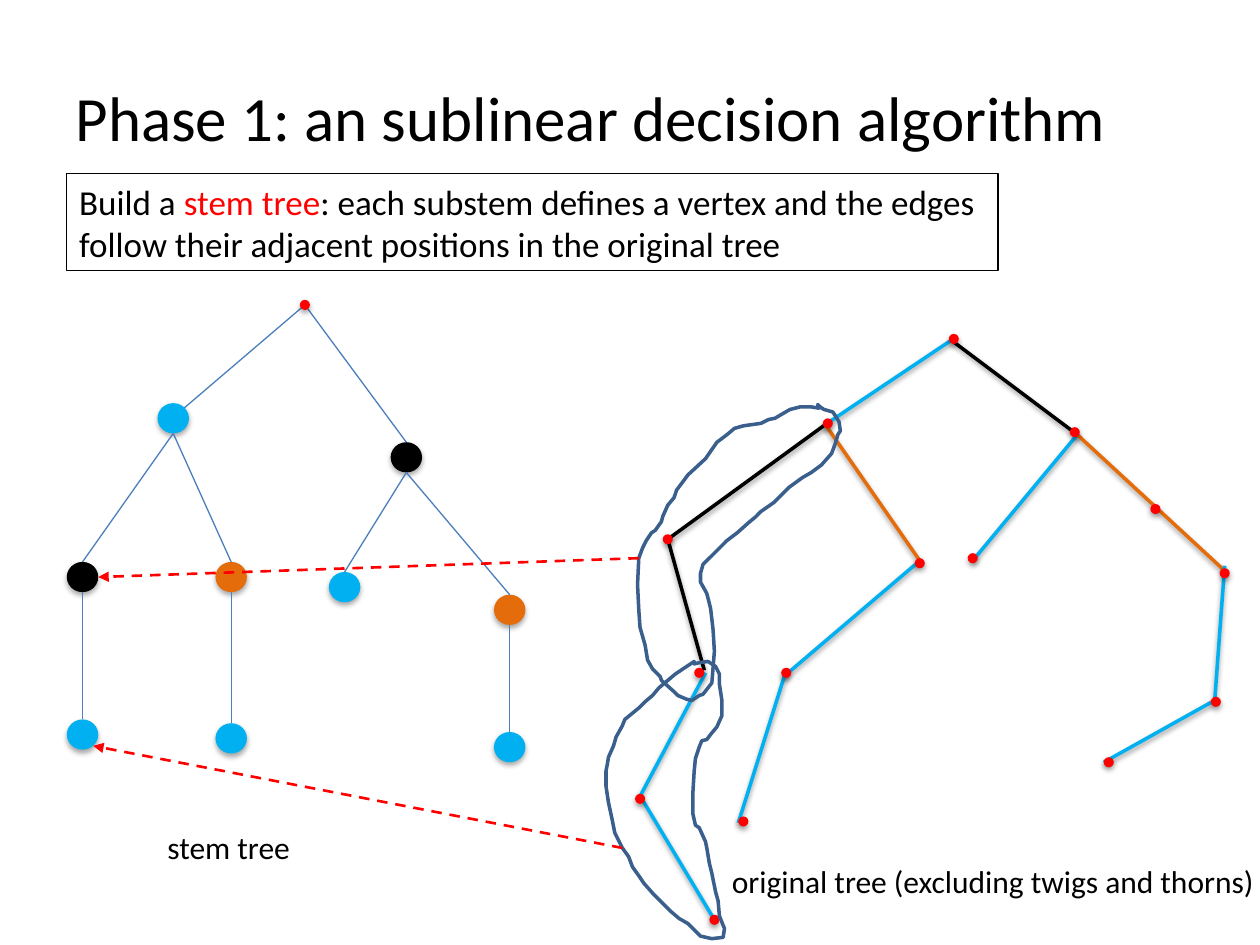
"""Build the slide that relates a stem tree to the original tree."""
from dataclasses import dataclass
from typing import NamedTuple

from lxml import etree
from pptx import Presentation
from pptx.dml.color import RGBColor
from pptx.enum.dml import MSO_LINE
from pptx.enum.shapes import MSO_CONNECTOR, MSO_SHAPE
from pptx.enum.text import MSO_ANCHOR, MSO_AUTO_SIZE, PP_ALIGN
from pptx.oxml.ns import qn
from pptx.util import Inches, Pt

STRAIGHT = MSO_CONNECTOR.STRAIGHT
NODE = MSO_SHAPE.FLOWCHART_CONNECTOR
DASH = MSO_LINE.DASH
MIDDLE = MSO_ANCHOR.MIDDLE
LEFT = PP_ALIGN.LEFT
GROW = MSO_AUTO_SIZE.SHAPE_TO_FIT_TEXT


@dataclass(frozen=True)
class Theme:
    """Colours, font and sizes in points."""
    font: str = "Calibri"
    title: int = 36
    body: int = 20
    label: int = 18
    thin: float = 0.75
    dashed: float = 1.5
    thick: float = 2
    black: str = "000000"
    red: str = "FF0000"
    blue: str = "00B0F0"
    orange: str = "E46C0A"
    edge: str = "4B7EBC"
    outline: str = "3A5F8C"


class Point(NamedTuple):
    """A place on the slide in inches."""
    x: float
    y: float


class Stem(NamedTuple):
    """A coloured line of the original tree."""
    start: Point
    end: Point
    color: str


class Vertex(NamedTuple):
    """A substem in the stem tree, placed by its top left corner."""
    x: float
    y: float
    color: str


class Label(NamedTuple):
    """A caption without wrapping."""
    text: str
    x: float
    y: float
    width: float


THEME = Theme()
DOT = 0.08
VERTEX_WIDTH, VERTEX_HEIGHT = 0.25, 0.24
BLACK, BLUE, ORANGE = THEME.black, THEME.blue, THEME.orange

STEMS = [
    Stem(Point(7.55, 2.7), Point(6.55, 3.37), BLUE),
    Stem(Point(7.55, 2.7), Point(8.55, 3.45), BLACK),
    Stem(Point(6.55, 3.37), Point(5.3, 4.28), BLACK),
    Stem(Point(6.55, 3.37), Point(7.3, 4.45), ORANGE),
    Stem(Point(8.55, 3.45), Point(7.72, 4.45), BLUE),
    Stem(Point(8.55, 3.45), Point(9.72, 4.53), ORANGE),
    Stem(Point(7.3, 4.45), Point(6.22, 5.37), BLUE),
    Stem(Point(9.72, 4.49), Point(9.64, 5.57), BLUE),
    Stem(Point(9.62, 5.57), Point(8.76, 6.05), BLUE),
    Stem(Point(5.3, 4.28), Point(5.59, 5.32), BLACK),
    Stem(Point(5.6, 5.34), Point(5.08, 6.32), BLUE),
    Stem(Point(5.1, 6.35), Point(5.67, 7.3), BLUE),
    Stem(Point(6.24, 5.32), Point(5.86, 6.53), BLUE),
]
DOTS = [Point(*place) for place in (
    (5.51, 5.3), (6.53, 3.32), (5.26, 4.24), (5.04, 6.3), (5.63, 7.26),
    (7.26, 4.43), (6.2, 5.3), (5.86, 6.48), (7.53, 2.65), (8.49, 3.39),
    (7.68, 4.39), (9.68, 4.51), (9.61, 5.53), (8.76, 6.01), (9.13, 4))]
ROOT = Point(2.38, 2.38)
VERTICES = {
    "left": Vertex(1.25, 3.2, BLUE),
    "right": Vertex(3.1, 3.51, BLACK),
    "left.1": Vertex(0.53, 4.46, BLACK),
    "left.2": Vertex(1.71, 4.46, ORANGE),
    "right.1": Vertex(2.61, 4.54, BLUE),
    "right.2": Vertex(3.92, 4.72, ORANGE),
    "left.1.1": Vertex(0.53, 5.71, BLUE),
    "left.2.1": Vertex(1.71, 5.74, BLUE),
    "right.2.1": Vertex(3.92, 5.81, BLUE),
}
LOWER_SUBSTEM = [Point(*place) for place in (
    (5.51, 5.25), (5.42, 5.31), (5.36, 5.35), (5.23, 5.46), (5.18, 5.52), (5.12, 5.57),
    (5.07, 5.62), (4.96, 5.71), (4.94, 5.76), (4.89, 5.85), (4.87, 5.92), (4.83, 6.01),
    (4.82, 6.07), (4.81, 6.12), (4.81, 6.24), (4.83, 6.37), (4.86, 6.51), (4.88, 6.61),
    (4.94, 6.73), (4.99, 6.8), (5.02, 6.88), (5.07, 6.95), (5.11, 7.01), (5.19, 7.1),
    (5.24, 7.15), (5.32, 7.23), (5.39, 7.29), (5.46, 7.33), (5.5, 7.37), (5.56, 7.43),
    (5.65, 7.45), (5.74, 7.44), (5.75, 7.37), (5.71, 7.27), (5.7, 7.15), (5.68, 7.08),
    (5.65, 6.93), (5.63, 6.85), (5.61, 6.73), (5.6, 6.68), (5.55, 6.57), (5.52, 6.55),
    (5.5, 6.46), (5.5, 6.29), (5.51, 6.12), (5.52, 6.02), (5.55, 5.93), (5.57, 5.88),
    (5.61, 5.87), (5.64, 5.83), (5.69, 5.77), (5.73, 5.68), (5.73, 5.56), (5.71, 5.43),
    (5.71, 5.35), (5.68, 5.29), (5.62, 5.25), (5.55, 5.26), (5.51, 5.27))]
UPPER_SUBSTEM = [Point(*place) for place in (
    (6.5, 3.24), (6.44, 3.23), (6.35, 3.23), (6.27, 3.25), (6.15, 3.32), (6.1, 3.33),
    (6.04, 3.36), (5.9, 3.38), (5.83, 3.4), (5.77, 3.45), (5.69, 3.51), (5.6, 3.64),
    (5.46, 3.77), (5.43, 3.81), (5.37, 3.89), (5.35, 3.95), (5.3, 4.01), (5.26, 4.1),
    (5.25, 4.14), (5.2, 4.21), (5.17, 4.23), (5.13, 4.29), (5.1, 4.35), (5.07, 4.43),
    (5.06, 4.64), (5.07, 4.84), (5.08, 4.98), (5.1, 5.05), (5.12, 5.12), (5.14, 5.24),
    (5.18, 5.31), (5.24, 5.37), (5.25, 5.4), (5.35, 5.49), (5.38, 5.52), (5.45, 5.55),
    (5.49, 5.56), (5.55, 5.52), (5.58, 5.51), (5.65, 5.42), (5.67, 5.17), (5.66, 5),
    (5.64, 4.83), (5.61, 4.71), (5.56, 4.62), (5.56, 4.55), (5.58, 4.48), (5.62, 4.44),
    (5.7, 4.36), (5.77, 4.29), (5.85, 4.23), (5.94, 4.15), (6, 4.1), (6.04, 4.06),
    (6.14, 3.99), (6.2, 3.93), (6.26, 3.87), (6.37, 3.79), (6.44, 3.75), (6.52, 3.69),
    (6.6, 3.6), (6.63, 3.52), (6.65, 3.45), (6.67, 3.42), (6.66, 3.35), (6.63, 3.3),
    (6.61, 3.27), (6.54, 3.25), (6.51, 3.23), (6.49, 3.21))]
LABELS = [Label("original tree (excluding twigs and thorns)", 5.71, 6.79, 4.4),
          Label("stem tree", 1.23, 6.52, 1.19)]


def add_shadow(part, alpha: int, distance: float) -> None:
    """Give a shape or connector a soft shadow straight below it."""
    effects = part.element.spPr.find(qn("a:effectLst"))
    shadow = etree.SubElement(effects, qn("a:outerShdw"), blurRad=str(Pt(3.1)),
                              dist=str(Pt(distance)), dir="5400000", rotWithShape="0")
    color = etree.SubElement(shadow, qn("a:srgbClr"), val=THEME.black)
    etree.SubElement(color, qn("a:alpha"), val=str(alpha * 1000))


def add_line(slide, start: Point, end: Point, color: str, width: float):
    """Draw a straight line without a shadow."""
    line = slide.shapes.add_connector(STRAIGHT, *map(Inches, (*start, *end)))
    line.line.color.rgb = RGBColor.from_string(color)
    line.line.width = Pt(width)
    etree.SubElement(line.element.spPr, qn("a:effectLst"))
    return line


def add_arrow(slide, start: Point, end: Point) -> None:
    """Draw a dashed arrow from a substem to its vertex."""
    arrow = add_line(slide, start, end, THEME.red, THEME.dashed)
    arrow.line.dash_style = DASH
    etree.SubElement(arrow.element.spPr.find(qn("a:ln")), qn("a:tailEnd"), type="triangle")


def add_node(slide, corner: Point, width: float, height: float, color: str) -> None:
    """Draw a round node with a shadow."""
    node = slide.shapes.add_shape(NODE, *map(Inches, (*corner, width, height)))
    node.fill.solid()
    node.fill.fore_color.rgb = RGBColor.from_string(color)
    node.line.fill.background()
    node.shadow.inherit = False
    add_shadow(node, 35, 1.8)


def add_outline(slide, points: list[Point]) -> None:
    """Draw a closed loop around a substem."""
    corners = [(Inches(x), Inches(y)) for x, y in points]
    builder = slide.shapes.build_freeform(*corners[0])
    builder.add_line_segments(corners[1:])
    loop = builder.convert_to_shape()
    loop.fill.background()
    loop.line.color.rgb = RGBColor.from_string(THEME.outline)
    loop.line.width = Pt(THEME.thick)
    loop.shadow.inherit = False


def style_text(paragraph, size: int) -> None:
    """Set the shared font on a paragraph."""
    paragraph.font.name = THEME.font
    paragraph.font.size = Pt(size)
    paragraph.font.color.rgb = RGBColor.from_string(THEME.black)


def add_title(slide) -> None:
    """Fill the title placeholder."""
    title = slide.shapes.title
    title.left, title.top, title.width, title.height = map(Inches, (0.5, 0.3, 9, 1.25))
    title.text_frame.text = "Phase 1: an sublinear decision algorithm"
    title.text_frame.vertical_anchor = MIDDLE
    title.text_frame.paragraphs[0].alignment = LEFT
    style_text(title.text_frame.paragraphs[0], THEME.title)


def add_definition(slide) -> None:
    """Add the framed definition of a stem tree."""
    definition = slide.shapes.add_textbox(*map(Inches, (0.53, 1.38, 7.39, 0.77)))
    definition.line.color.rgb = RGBColor.from_string(THEME.black)
    definition.line.width = Pt(THEME.thin)
    definition.text_frame.word_wrap = True
    definition.text_frame.auto_size = GROW
    paragraph = definition.text_frame.paragraphs[0]
    style_text(paragraph, THEME.body)
    paragraph.add_run().text = "Build a "
    term = paragraph.add_run()
    term.text = "stem tree"
    term.font.color.rgb = RGBColor.from_string(THEME.red)
    paragraph.add_run().text = (": each substem defines a vertex and the edges "
                                "follow their adjacent positions in the original tree")


def add_label(slide, label: Label) -> None:
    """Add a caption below a tree."""
    caption = slide.shapes.add_textbox(*map(Inches, (label.x, label.y, label.width, 0.4)))
    caption.text_frame.word_wrap = False
    caption.text_frame.auto_size = GROW
    caption.text_frame.text = label.text
    style_text(caption.text_frame.paragraphs[0], THEME.label)


def add_original_tree(slide) -> None:
    """Draw the stems and their joints."""
    for stem in STEMS:
        add_shadow(add_line(slide, *stem, THEME.thick), 38, 1.6)
    for dot in DOTS:
        add_node(slide, dot, DOT, DOT, THEME.red)


def add_stem_tree(slide) -> None:
    """Draw the vertices and join each one to its parent."""
    for vertex in VERTICES.values():
        add_node(slide, Point(vertex.x, vertex.y), VERTEX_WIDTH, VERTEX_HEIGHT, vertex.color)
    for name, vertex in VERTICES.items():
        top = Point(vertex.x + VERTEX_WIDTH / 2, vertex.y)
        parent = VERTICES.get(name.rpartition(".")[0])
        start = Point(ROOT.x + DOT / 2, ROOT.y + DOT / 2)
        if parent:
            start = Point(parent.x + VERTEX_WIDTH / 2, parent.y + VERTEX_HEIGHT)
        elif name == "left":
            top = Point(1.46, 3.24)
        add_line(slide, start, top, THEME.edge, THEME.thin)
    add_node(slide, ROOT, DOT, DOT, THEME.red)


def main() -> None:
    """Build and save the slide."""
    deck = Presentation()
    deck.slide_width, deck.slide_height = Inches(10), Inches(7.5)
    slide = deck.slides.add_slide(deck.slide_layouts[5])
    add_title(slide)
    add_definition(slide)
    add_original_tree(slide)
    add_stem_tree(slide)
    add_outline(slide, LOWER_SUBSTEM)
    add_arrow(slide, Point(4.94, 6.73), Point(0.74, 5.92))
    add_outline(slide, UPPER_SUBSTEM)
    add_arrow(slide, Point(5.07, 4.43), Point(0.78, 4.58))
    for label in LABELS:
        add_label(slide, label)
    deck.save("out.pptx")


if __name__ == "__main__":
    main()
